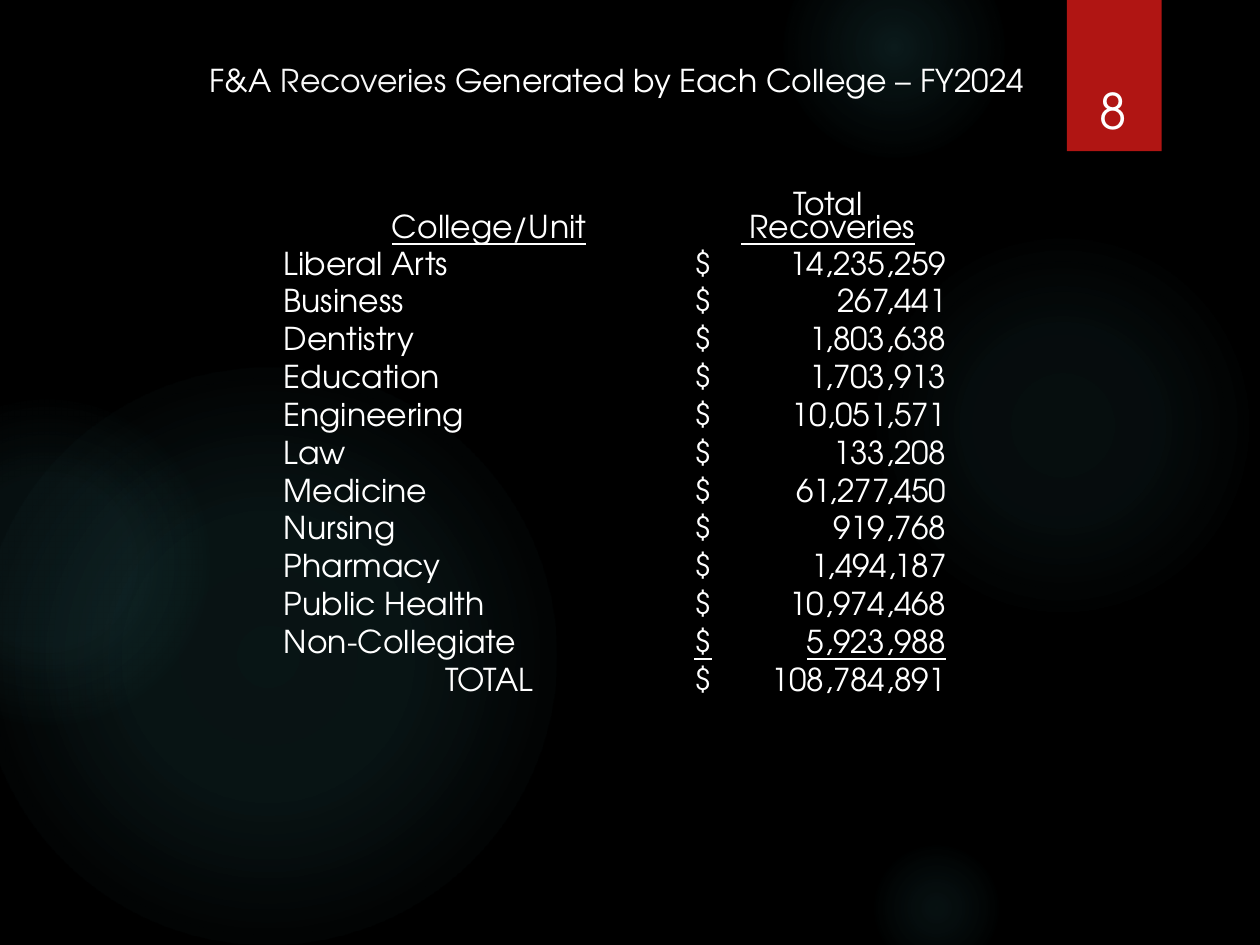
from lxml.etree import fromstring
from pptx import Presentation
from pptx.dml.color import RGBColor
from pptx.enum.shapes import MSO_SHAPE
from pptx.enum.text import MSO_ANCHOR, MSO_AUTO_SIZE, PP_ALIGN
from pptx.oxml.ns import nsdecls, qn
from pptx.util import Cm, Pt

BLACK = RGBColor(0, 0, 0)
WHITE = RGBColor(255, 255, 255)
PALE = RGBColor(0xF7, 0xF7, 0xF7)
RED = RGBColor(0xB0, 0x15, 0x13)
TEAL = RGBColor(0x50, 0xB9, 0xC1)
FONT = "TeX Gyre Adventor"
PLAIN = "{2D5ABB26-0587-4C30-8999-92F81FD0307C}"

GLOWS = [
    (17.5, 4.65, 7.83, [(0, 7), (36, 6), (69, 0)]),
    (15.8, -1.27, 4.45, [(0, 14), (36, 7), (73, 0)]),
    (17.5, 16.93, 2.75, [(0, 9), (36, 5), (66, 0)]),
    (-0.43, 7.41, 11.64, [(0, 11), (36, 10), (75, 0)]),
    (-2.33, 8.05, 6.56, [(0, 8), (36, 8), (72, 0)]),
]
TITLE = [("F&A ", WHITE), ("Recoveries", PALE),
         (" Generated by Each College – FY2024", WHITE)]
ROWS = [
    ("Liberal Arts", "14,235,259"),
    ("Business", "267,441"),
    ("Dentistry", "1,803,638"),
    ("Education", "1,703,913"),
    ("Engineering", "10,051,571"),
    ("Law", "133,208"),
    ("Medicine", "61,277,450"),
    ("Nursing", "919,768"),
    ("Pharmacy", "1,494,187"),
    ("Public Health", "10,974,468"),
    ("Non-Collegiate", "5,923,988"),
    ("TOTAL", "108,784,891"),
]


def style(run, size=18, color=WHITE, line=False):
    font = run.font
    font.name, font.size, font.underline = FONT, Pt(size), line
    font.color.rgb = color


def add_glow(slide, left, top, size, stops):
    glow = slide.shapes.add_shape(
        MSO_SHAPE.OVAL, Cm(left), Cm(top), Cm(size), Cm(size))
    glow.shadow.inherit = False
    glow.line.fill.background()
    glow.fill.background()
    marks = "".join(
        f'<a:gs pos="{pos * 1000}"><a:srgbClr val="{TEAL}">'
        f'<a:alpha val="{alpha * 1000}"/></a:srgbClr></a:gs>'
        for pos, alpha in stops)
    grad = fromstring(
        f'<a:gradFill {nsdecls("a")}><a:gsLst>{marks}</a:gsLst>'
        '<a:path path="circle"><a:fillToRect l="50000" t="50000" '
        'r="50000" b="50000"/></a:path></a:gradFill>')
    props = glow.element.spPr
    props.replace(props.find(qn("a:noFill")), grad)


def add_flag(slide, left, top, width, height):
    flag = slide.shapes.add_shape(
        MSO_SHAPE.RECTANGLE, left, top, width, height)
    flag.shadow.inherit = False
    flag.fill.solid()
    flag.fill.fore_color.rgb = RED
    flag.line.fill.background()
    box = slide.shapes.add_textbox(
        left + Cm(0.05), top + Cm(0.81), width - Cm(0.16), Cm(2.13))
    frame = box.text_frame
    frame.word_wrap = True
    frame.vertical_anchor = MSO_ANCHOR.BOTTOM
    frame.text = "8"
    para = frame.paragraphs[0]
    para.alignment = PP_ALIGN.CENTER
    style(para.runs[0], 28)


def set_title(slide, left, top, width, height):
    title = slide.shapes.title
    title.left, title.top, title.width, title.height = left, top, width, height
    frame = title.text_frame
    frame.word_wrap = True
    frame.auto_size = MSO_AUTO_SIZE.NONE
    frame.vertical_anchor = MSO_ANCHOR.TOP
    para = frame.paragraphs[0]
    para.alignment = PP_ALIGN.CENTER
    for text, color in TITLE:
        run = para.add_run()
        run.text = text
        style(run, color=color)
    slide.shapes.element.append(title.element)


def fill_cell(cell, text, center=False, line=False):
    cell.fill.background()
    cell.margin_left = cell.margin_right = 0
    cell.margin_top = cell.margin_bottom = 0
    cell.vertical_anchor = MSO_ANCHOR.BOTTOM
    cell.text_frame.text = text
    for para in cell.text_frame.paragraphs:
        para.alignment = PP_ALIGN.CENTER if center else PP_ALIGN.LEFT
        style(para.runs[0], line=line)


def add_tab(cell, stop):
    props = cell.text_frame.paragraphs[0]._p.get_or_add_pPr()
    props.append(fromstring(
        f'<a:tabLst {nsdecls("a")}><a:tab pos="{stop}" algn="r"/></a:tabLst>'))


def add_grid(slide, left, top, width, height):
    step = height // (len(ROWS) + 2)
    frame = slide.shapes.add_table(
        len(ROWS) + 1, 2, left, top, width, height)
    table = frame.table
    table.first_row = table.horz_banding = False
    table._tbl.tblPr.find(qn("a:tableStyleId")).text = PLAIN
    table.columns[0].width = Cm(8.28)
    table.columns[1].width = width - Cm(8.28)
    for row in table.rows:
        row.height = step
    table.rows[0].height = 2 * step

    fill_cell(table.cell(0, 0), "College/Unit", True, True)
    head = table.cell(0, 1)
    fill_cell(head, "Total\n Recoveries", True, True)
    head.text_frame.paragraphs[0].runs[0].font.underline = False
    for cell in (table.cell(0, 0), head):
        for para in cell.text_frame.paragraphs:
            para.line_spacing = 0.8

    for num, (name, sum_) in enumerate(ROWS, 1):
        fill_cell(table.cell(num, 0), name, name == "TOTAL")
        cell = table.cell(num, 1)
        fill_cell(cell, f"$\t{sum_}", line=num == len(ROWS) - 1)
        add_tab(cell, Cm(5.08))


def main():
    deck = Presentation()
    deck.slide_width, deck.slide_height = Cm(25.4), Cm(19.05)
    slide = deck.slides.add_slide(deck.slide_layouts[5])
    slide.background.fill.solid()
    slide.background.fill.fore_color.rgb = BLACK
    for glow in GLOWS:
        add_glow(slide, *glow)
    add_flag(slide, Cm(21.51), Cm(0), Cm(1.91), Cm(3.05))
    add_grid(slide, Cm(5.72), Cm(3.38), Cm(13.66), Cm(10.67))
    set_title(slide, Cm(2.18), Cm(1.1), Cm(20.52), Cm(1.02))
    deck.save("out.pptx")


if __name__ == "__main__":
    main()
